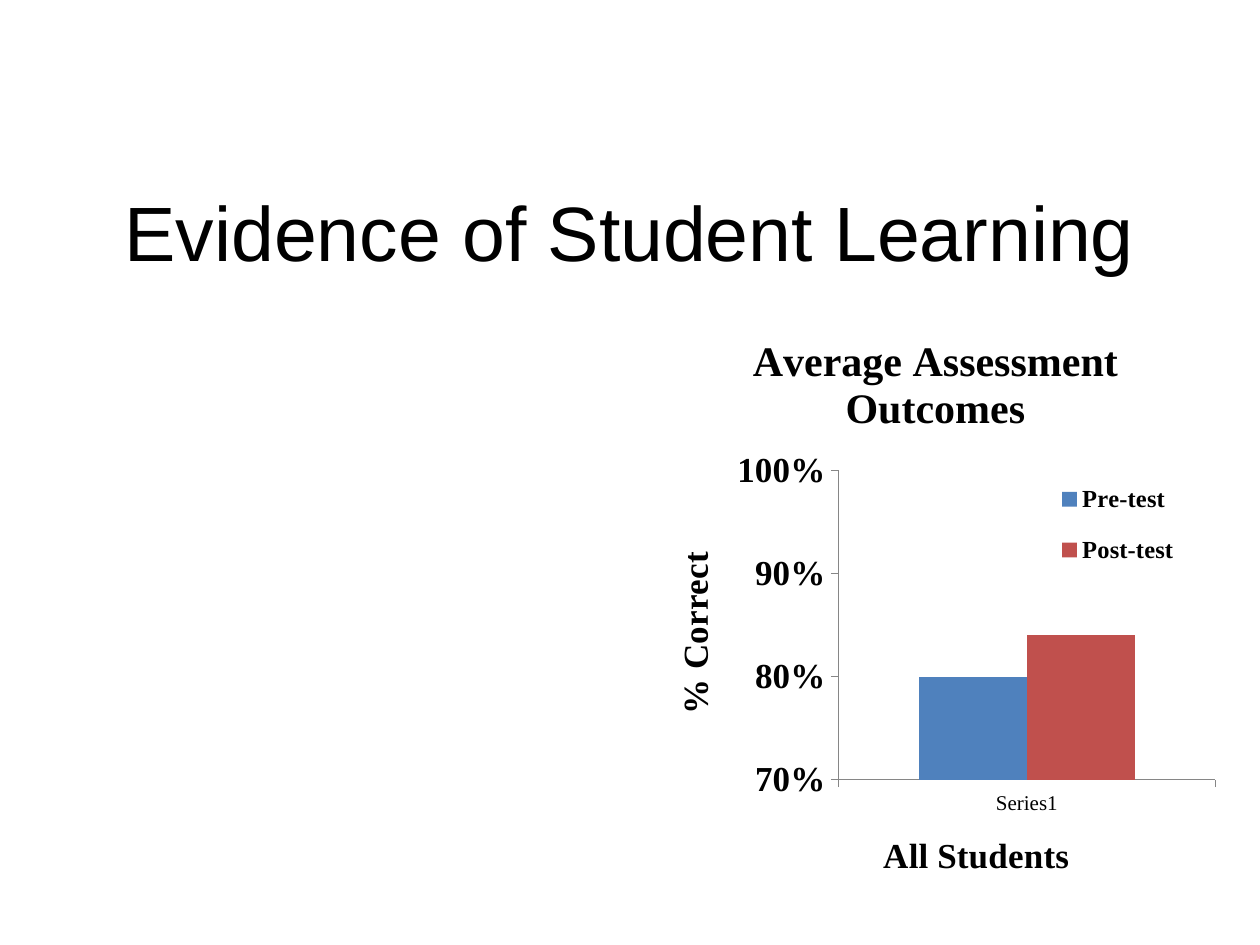
from dataclasses import dataclass

from lxml import etree
from pptx import Presentation
from pptx import util as u
from pptx.chart.data import CategoryChartData
from pptx.dml.color import RGBColor
from pptx.enum import chart as charts, text
from pptx.oxml.ns import qn

BLACK = RGBColor(0x00, 0x00, 0x00)
WHITE = RGBColor(0xFF, 0xFF, 0xFF)
GREY = RGBColor(0x86, 0x86, 0x86)
BLUE = RGBColor(0x4F, 0x81, 0xBD)
RED = RGBColor(0xC0, 0x50, 0x4D)
CHART_FONT = "Times New Roman"


@dataclass
class TestResult:
    name: str
    average: float
    color: RGBColor


RESULTS = [TestResult("Pre-test", 0.8, BLUE), TestResult("Post-test", 0.84, RED)]


def format_font(font, name: str, size: float, bold: bool = False) -> None:
    font.name = name
    font.size = u.Pt(size)
    font.bold = bold
    font.color.rgb = BLACK


def place(element, **percentages: float) -> None:
    """Give a chart part a manual layout, in percent of the chart area."""
    layout = element.find(qn("c:layout"))
    if layout is None:
        layout = etree.Element(qn("c:layout"))
        overlay = element.find(qn("c:overlay"))
        if overlay is None:
            element.insert(0, layout)
        else:
            overlay.addprevious(layout)
    for child in list(layout):
        layout.remove(child)
    manual = etree.SubElement(layout, qn("c:manualLayout"))
    if element.tag == qn("c:plotArea"):
        etree.SubElement(manual, qn("c:layoutTarget")).set("val", "inner")
    for mode in ("xMode", "yMode"):
        etree.SubElement(manual, qn(f"c:{mode}")).set("val", "edge")
    for name, value in percentages.items():
        etree.SubElement(manual, qn(f"c:{name}")).set("val", str(value / 100))


def write_title(title, wording: str, size: float, x: float, y: float) -> None:
    title.text_frame.text = wording
    for run in title.text_frame.paragraphs[0].runs:
        format_font(run.font, CHART_FONT, size, bold=True)
    place(title._element, x=x, y=y)


def format_axis(axis, size: float, bold: bool) -> None:
    axis.has_major_gridlines = False
    axis.major_tick_mark = charts.XL_TICK_MARK.OUTSIDE
    axis.minor_tick_mark = charts.XL_TICK_MARK.NONE
    axis.format.line.color.rgb = GREY
    axis.format.line.width = u.Pt(0.75)
    format_font(axis.tick_labels.font, CHART_FONT, size, bold)


def fill_chart_area(chart, color: RGBColor) -> None:
    properties = etree.Element(qn("c:spPr"))
    fill = etree.SubElement(properties, qn("a:solidFill"))
    etree.SubElement(fill, qn("a:srgbClr")).set("val", str(color))
    line = etree.SubElement(properties, qn("a:ln"))
    etree.SubElement(line, qn("a:noFill"))
    chart._chartSpace.find(qn("c:chart")).addnext(properties)


def add_heading(slide) -> None:
    title = slide.shapes.title
    title.left, title.top = u.Cm(1.27), u.Cm(3.45)
    title.width, title.height = u.Cm(22.86), u.Cm(2.39)
    frame = title.text_frame
    frame.text = "Evidence of Student Learning"
    frame.vertical_anchor = text.MSO_ANCHOR.MIDDLE
    paragraph = frame.paragraphs[0]
    paragraph.alignment = text.PP_ALIGN.CENTER
    format_font(paragraph.runs[0].font, "Arial", 44)


def add_outcomes_chart(slide) -> None:
    data = CategoryChartData(number_format="0%")
    data.categories = ["Series1"]
    for result in RESULTS:
        data.add_series(result.name, [result.average])
    chart = slide.shapes.add_chart(
        charts.XL_CHART_TYPE.COLUMN_CLUSTERED,
        u.Cm(12.95), u.Cm(6.32), u.Cm(11.79), u.Cm(11.99), data,
    ).chart
    format_font(chart.font, CHART_FONT, 10)
    fill_chart_area(chart, WHITE)

    chart.has_title = True
    write_title(chart.chart_title, "Average Assessment Outcomes", 24, 17.6, 2.1)

    plot = chart.plots[0]
    plot.gap_width = 150
    plot.overlap = 0
    plot.vary_by_categories = False
    for series, result in zip(plot.series, RESULTS):
        series.format.fill.solid()
        series.format.fill.fore_color.rgb = result.color

    format_axis(chart.category_axis, 12, bold=False)
    write_title(chart.category_axis.axis_title, "All Students", 20, 40.1, 86.3)

    value_axis = chart.value_axis
    format_axis(value_axis, 20, bold=True)
    value_axis.minimum_scale, value_axis.maximum_scale = 0.7, 1
    value_axis.major_unit = 0.1
    value_axis.tick_labels.number_format = "0%"
    value_axis.tick_labels.number_format_is_linked = False
    write_title(value_axis.axis_title, "% Correct", 20, 4, 39)

    chart.has_legend = True
    chart.legend.position = charts.XL_LEGEND_POSITION.RIGHT
    chart.legend.include_in_layout = True
    format_font(chart.legend.font, CHART_FONT, 14, bold=True)
    place(chart.legend._element, x=68.8, y=25, w=25, h=21)
    plot_area = chart._chartSpace.find(f".//{qn('c:plotArea')}")
    place(plot_area, x=33.5, y=26.4, w=64.5, h=52)


def main() -> None:
    presentation = Presentation()
    presentation.slide_width, presentation.slide_height = u.Cm(25.4), u.Cm(19.05)
    slide = presentation.slides.add_slide(presentation.slide_layouts[5])
    slide.background.fill.solid()
    slide.background.fill.fore_color.rgb = WHITE
    add_heading(slide)
    add_outcomes_chart(slide)
    presentation.save("out.pptx")


if __name__ == "__main__":
    main()
